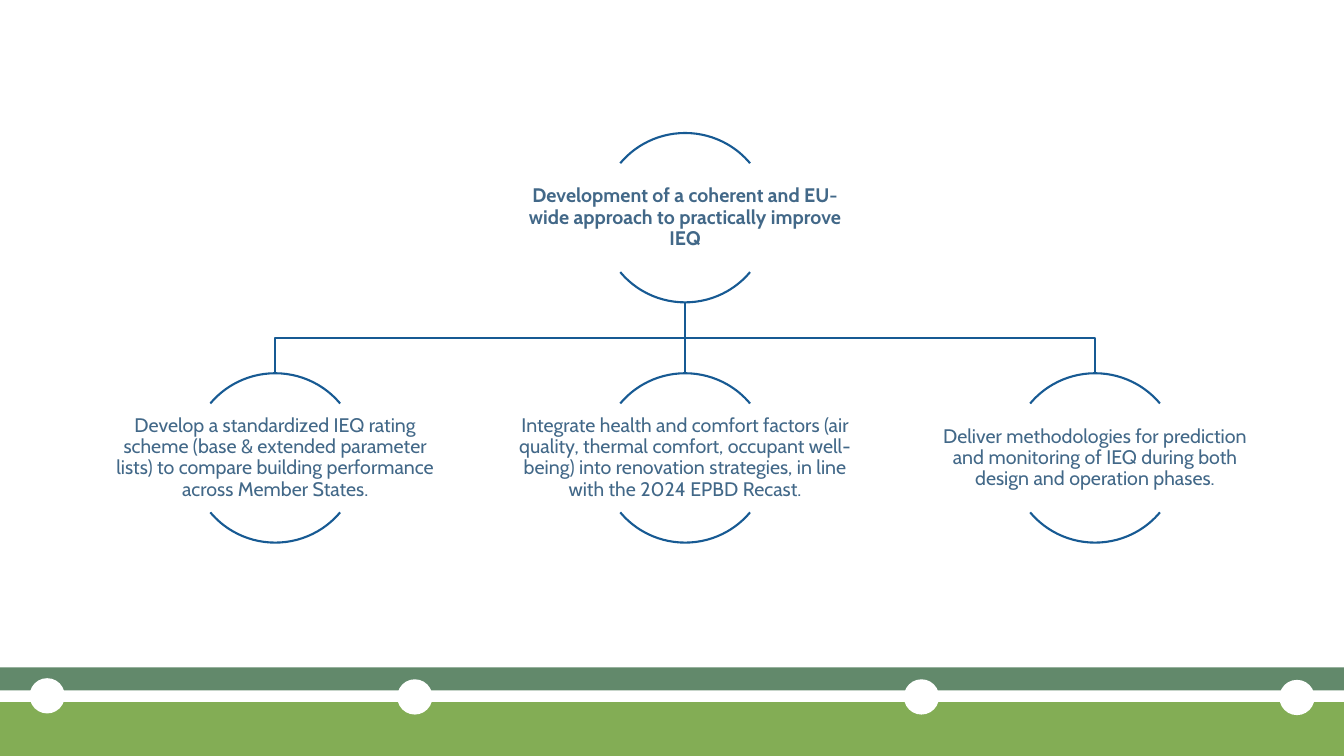
from dataclasses import dataclass

from lxml import etree
from pptx import Presentation
from pptx.dml.color import RGBColor
from pptx.enum.shapes import MSO_CONNECTOR, MSO_SHAPE
from pptx.enum.text import MSO_ANCHOR, PP_ALIGN
from pptx.oxml.ns import qn
from pptx.shapes.base import BaseShape
from pptx.slide import Slide
from pptx.util import Pt

ARC, OVAL, RECTANGLE = MSO_SHAPE.ARC, MSO_SHAPE.OVAL, MSO_SHAPE.RECTANGLE
STRAIGHT = MSO_CONNECTOR.STRAIGHT
MIDDLE, CENTER = MSO_ANCHOR.MIDDLE, PP_ALIGN.CENTER

SLIDE_WIDTH, SLIDE_HEIGHT = 960, 540
DIAMETER = 121
TEXT_WIDTH, TEXT_HEIGHT = 2 * DIAMETER, 77.5
CENTER_X, BRANCH_GAP = 489.4, 292.8
ROOT_TOP, BRANCH_TOP = 95, 266.6
ROOT_BOTTOM = ROOT_TOP + DIAMETER
BUS_Y = (ROOT_BOTTOM + BRANCH_TOP) / 2
ARC_ANGLES = ((132, 192), (24, 84))
DOT_SIZE = 25.2


@dataclass(frozen=True)
class Theme:
    font: str = "Cabin"
    text_size: float = 14
    line_width: float = 1.5
    text: RGBColor = RGBColor(0x42, 0x68, 0x88)
    line: RGBColor = RGBColor(0x17, 0x5A, 0x93)
    upper_band: RGBColor = RGBColor(0x62, 0x89, 0x6B)
    lower_band: RGBColor = RGBColor(0x83, 0xAD, 0x55)
    white: RGBColor = RGBColor(0xFF, 0xFF, 0xFF)


THEME = Theme()


@dataclass(frozen=True)
class FooterPart:
    kind: MSO_SHAPE
    left: float
    top: float
    width: float
    height: float
    color: RGBColor


@dataclass(frozen=True)
class Node:
    text: str
    center_x: float
    top: float
    bold: bool = False


FOOTER = [
    FooterPart(RECTANGLE, 0, 476.7, SLIDE_WIDTH, 16.4, THEME.upper_band),
    FooterPart(RECTANGLE, 0, 501.6, SLIDE_WIDTH, 38.4, THEME.lower_band),
] + [
    FooterPart(OVAL, left, top, DOT_SIZE, DOT_SIZE, THEME.white)
    for left, top in ((21.1, 484.4), (283.7, 485.2), (645.6, 485.2), (913.8, 485.6))
]

ROOT = Node(
    "Development of a coherent and EU-wide approach to practically improve IEQ",
    CENTER_X, ROOT_TOP, True,
)
BRANCH_TEXTS = (
    "Develop a standardized IEQ rating scheme (base & extended parameter lists) "
    "to compare building performance across Member States.",
    "Integrate health and comfort factors (air quality, thermal comfort, occupant "
    "well-being) into renovation strategies, in line with the 2024 EPBD Recast.",
    "Deliver methodologies for prediction and monitoring of IEQ during both design "
    "and operation phases.",
)
BRANCHES = [
    Node(text, CENTER_X + (index - 1) * BRANCH_GAP, BRANCH_TOP)
    for index, text in enumerate(BRANCH_TEXTS)
]


def set_attributes(target: object, values: dict[str, object]) -> None:
    for name, value in values.items():
        setattr(target, name, value)


def style_outline(shape: BaseShape) -> None:
    shape.line.color.rgb = THEME.line
    shape.line.width = Pt(THEME.line_width)


def add_footer_part(slide: Slide, part: FooterPart) -> None:
    shape = slide.shapes.add_shape(
        part.kind, Pt(part.left), Pt(part.top), Pt(part.width), Pt(part.height)
    )
    shape.shadow.inherit = False
    shape.fill.solid()
    shape.fill.fore_color.rgb = part.color
    shape.line.fill.background()


def add_branch_line(slide: Slide, node: Node) -> None:
    if node.center_x == CENTER_X:
        line = slide.shapes.add_connector(
            STRAIGHT, Pt(CENTER_X), Pt(ROOT_BOTTOM), Pt(CENTER_X), Pt(BRANCH_TOP)
        )
        etree.SubElement(line.element.spPr, qn("a:effectLst"))
    else:
        builder = slide.shapes.build_freeform(Pt(CENTER_X), Pt(ROOT_BOTTOM))
        corners = (
            (CENTER_X, BUS_Y), (node.center_x, BUS_Y), (node.center_x, BRANCH_TOP)
        )
        builder.add_line_segments([(Pt(x), Pt(y)) for x, y in corners], close=False)
        line = builder.convert_to_shape()
        line.shadow.inherit = False
        line.fill.background()
    style_outline(line)


def add_node(slide: Slide, node: Node) -> None:
    for angles in ARC_ANGLES:
        arc = slide.shapes.add_shape(
            ARC, Pt(node.center_x - DIAMETER / 2), Pt(node.top), Pt(DIAMETER), Pt(DIAMETER)
        )
        for index, angle in enumerate(angles):
            arc.adjustments[index] = angle
        arc.shadow.inherit = False
        arc.fill.background()
        style_outline(arc)

    box = slide.shapes.add_textbox(
        Pt(node.center_x - TEXT_WIDTH / 2),
        Pt(node.top + (DIAMETER - TEXT_HEIGHT) / 2),
        Pt(TEXT_WIDTH),
        Pt(TEXT_HEIGHT),
    )
    margins = {f"margin_{side}": Pt(0.7) for side in ("left", "top", "right", "bottom")}
    set_attributes(
        box.text_frame, {"word_wrap": True, "vertical_anchor": MIDDLE, **margins}
    )
    paragraph = box.text_frame.paragraphs[0]
    set_attributes(paragraph, {"alignment": CENTER, "line_spacing": 0.9})
    run = paragraph.add_run()
    run.text = node.text
    set_attributes(
        run.font, {"name": THEME.font, "size": Pt(THEME.text_size), "bold": node.bold}
    )
    run.font.color.rgb = THEME.text


def main() -> None:
    """Build the slide with the approach, its three branches and the footer."""
    presentation = Presentation()
    set_attributes(
        presentation, {"slide_width": Pt(SLIDE_WIDTH), "slide_height": Pt(SLIDE_HEIGHT)}
    )
    slide = presentation.slides.add_slide(presentation.slide_layouts[6])
    for part in FOOTER:
        add_footer_part(slide, part)
    for branch in BRANCHES:
        add_branch_line(slide, branch)
    for node in (ROOT, *BRANCHES):
        add_node(slide, node)
    presentation.save("out.pptx")


if __name__ == "__main__":
    main()
